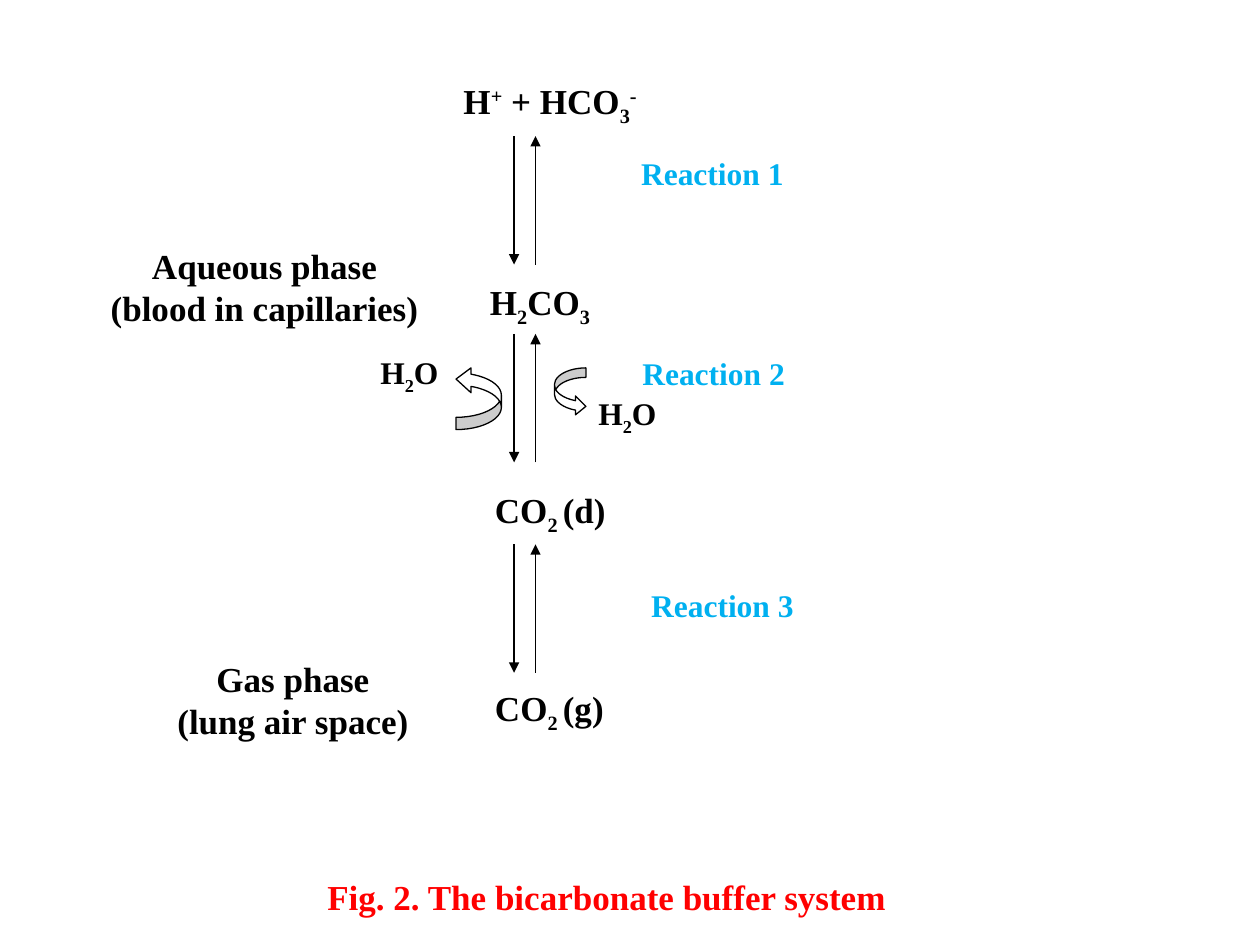
from lxml import etree
from pptx import Presentation, util as u
from pptx.dml.color import RGBColor
from pptx.enum import shapes, text
from pptx.oxml import ns

COLORS = {"ink": "000000", "reaction": "00B0F0", "caption": "FF0000", "paper": "FFFFFF"}
FONT = "Times New Roman"
COLUMNS, ROWS = 100, 75
BASELINES = {"^": "30000", "_": "-25000"}

# fmt: off
SPECIES = [
    ("H|^+| + HCO|_3|^-", 35.8, 5.8, 16.2),
    ("H|_2|CO|_3", 37.9, 21.8, 10.3),
    ("CO|_2 |(d)", 38.3, 38.3, 11),
    ("CO|_2 |(g)", 38.3, 54, 10.9),
]
PHASES = [
    ("Aqueous phase\n(blood in capillaries)", 7.7, 18.9, 26.6),
    ("Gas phase\n(lung air space)", 13, 51.7, 20.5),
]
REACTIONS = [
    ("Reaction 1", 49.9, 11.7, 13.4),
    ("Reaction 2", 50, 27.6, 13.4),
    ("Reaction 3", 50.7, 46, 13.4),
]
WATERS = [("H|_2|O", 29.2, 27.5, 6.8), ("H|_2|O", 46.5, 30.8, 6.8)]
CAPTION = [("Fig. 2. The bicarbonate buffer system", 25, 69, 46.7)]
# fmt: on
CURVED_ARROWS = [
    ((44, 29.2, 2.5, 3.8), (0.3, 0.6, 0.33), False),
    ((36.2, 29.1, 3.6, 5), (0.27, 0.55, 0.33), True),
]
FORWARD_COLUMN, BACKWARD_COLUMN = 40.8, 42.5
ARROW_TOPS, ARROW_ROWS = (10.8, 26.5, 43.2), 10.2

presentation = Presentation()
presentation.slide_width, presentation.slide_height = u.Inches(10), u.Inches(7.5)
slide = presentation.slides.add_slide(presentation.slide_layouts[6])


def across(columns):
    return round(presentation.slide_width * columns / COLUMNS)


def down(rows):
    return round(presentation.slide_height * rows / ROWS)


def place(left, top, width, height):
    return across(left), down(top), across(width), down(height)


def color(name):
    return RGBColor.from_string(COLORS[name])


def add_label(content, left, top, width, height=4.4, size=20, ink="ink", align=text.PP_ALIGN.LEFT):
    frame = slide.shapes.add_textbox(*place(left, top, width, height)).text_frame
    frame.word_wrap = False
    for index, line in enumerate(content.split("\n")):
        paragraph = frame.paragraphs[0] if index == 0 else frame.add_paragraph()
        paragraph.alignment = align
        for piece in line.split("|"):
            run = paragraph.add_run()
            baseline = BASELINES.get(piece[0])
            run.text = piece[1:] if baseline else piece
            run.font.name, run.font.size, run.font.bold = FONT, u.Pt(size), True
            run.font.color.rgb = color(ink)
            if baseline:
                run.font._element.set("baseline", baseline)


def add_arrow(column, start, end):
    arrow = slide.shapes.add_connector(
        shapes.MSO_CONNECTOR.STRAIGHT, across(column), down(start), across(column), down(end)
    )
    arrow.line.color.rgb, arrow.line.width = color("ink"), u.Pt(0.75)
    etree.SubElement(arrow.line._get_or_add_ln(), ns.qn("a:tailEnd"), type="triangle")
    etree.SubElement(arrow._element.spPr, ns.qn("a:effectLst"))


def add_curved_arrow(box, adjustments, flipped):
    shape = slide.shapes.add_shape(shapes.MSO_SHAPE.CURVED_RIGHT_ARROW, *place(*box))
    for index, value in enumerate(adjustments):
        shape.adjustments[index] = value
    shape.shadow.inherit = False
    shape.fill.solid()
    shape.fill.fore_color.rgb = color("paper")
    shape.line.color.rgb, shape.line.width = color("ink"), u.Pt(0.75)
    if flipped:
        frame = shape._element.spPr.xfrm
        frame.set("flipH", "1")
        frame.set("flipV", "1")


for curved_arrow in CURVED_ARROWS:
    add_curved_arrow(*curved_arrow)

LABEL_GROUPS = [
    (SPECIES, {}),
    (PHASES, {"height": 7.7, "align": text.PP_ALIGN.CENTER}),
    (REACTIONS, {"height": 4, "size": 18, "ink": "reaction"}),
    (WATERS, {"height": 4, "size": 18}),
    (CAPTION, {"ink": "caption"}),
]
for labels, style in LABEL_GROUPS:
    for label in labels:
        add_label(*label, **style)

for top in ARROW_TOPS:
    add_arrow(FORWARD_COLUMN, top, top + ARROW_ROWS)
    add_arrow(BACKWARD_COLUMN, top + ARROW_ROWS, top)

presentation.save("out.pptx")
